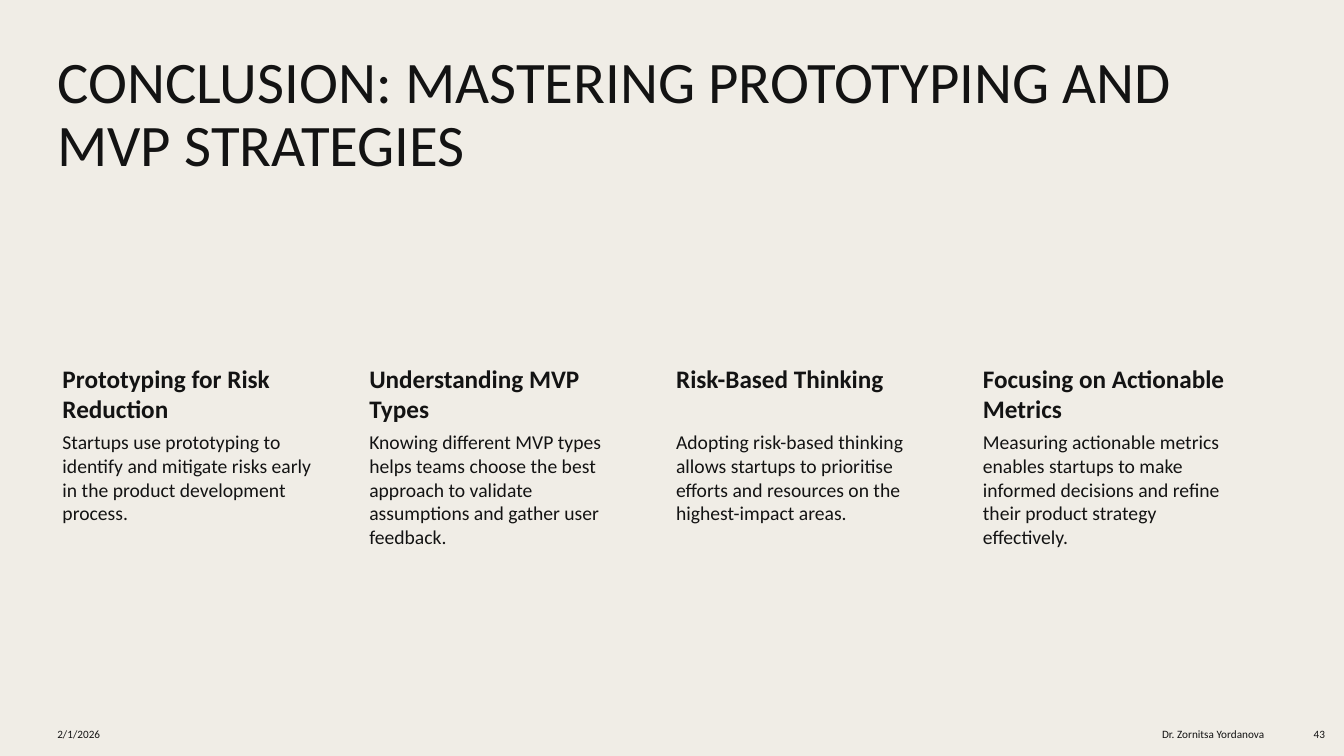
import pptx
import pptx.util
import pptx.dml.color
import pptx.enum.text
from pptx.util import Inches, Pt

TITLE = "CONCLUSION: MASTERING PROTOTYPING AND MVP STRATEGIES"
TAKEAWAYS = [
    ("Prototyping for Risk Reduction",
     "Startups use prototyping to identify and mitigate risks early in the product development process."),
    ("Understanding MVP Types",
     "Knowing different MVP types helps teams choose the best approach to validate assumptions and gather user feedback."),
    ("Risk-Based Thinking",
     "Adopting risk-based thinking allows startups to prioritise efforts and resources on the highest-impact areas."),
    ("Focusing on Actionable Metrics",
     "Measuring actionable metrics enables startups to make informed decisions and refine their product strategy effectively."),
]
ALIGN = pptx.enum.text.PP_ALIGN
FOOTER = [
    ("2/1/2026", 0.47, 3.11, ALIGN.LEFT),
    ("Dr. Zornitsa Yordanova", 9.73, 2.91, ALIGN.RIGHT),
    ("43", 12.74, 0.5, ALIGN.RIGHT),
]
FONT, INK, PAPER = "Calibri", "131313", "F0EDE6"
LEFT, COLUMN_WIDTH, COLUMN_STEP = 0.47, 2.77, 3.043
HEADING_TOP, HEADING_HEIGHT, BODY_HEIGHT = 3.57, 0.68, 2.4


def color(value):
    return pptx.dml.color.RGBColor.from_string(value)


def add_text(slide, text, box, size, bold=False, insets=(0.1, 0.05, 0.1, 0.05),
             align=ALIGN.LEFT, middle=False, spacing=1.0):
    sp = slide.shapes.add_textbox(*map(Inches, box))
    tf = sp.text_frame
    tf.word_wrap = True
    tf.margin_left, tf.margin_top, tf.margin_right, tf.margin_bottom = map(Inches, insets)
    anchor = pptx.enum.text.MSO_ANCHOR
    tf.vertical_anchor = anchor.MIDDLE if middle else anchor.TOP
    tf.text = text
    p = tf.paragraphs[0]
    p.alignment = align
    p.line_spacing = spacing
    font = p.runs[0].font
    font.name, font.size, font.bold = FONT, Pt(size), bold
    font.color.rgb = color(INK)


def main():
    prs = pptx.Presentation()
    prs.slide_width, prs.slide_height = Inches(13.33), Inches(7.5)
    slide = prs.slides.add_slide(prs.slide_layouts[6])
    fill = slide.background.fill
    fill.solid()
    fill.fore_color.rgb = color(PAPER)

    add_text(slide, TITLE, (LEFT, 0.47, 11.91, 1.78), 42, spacing=0.9)
    for i, (heading, body) in enumerate(TAKEAWAYS):
        x = LEFT + i * COLUMN_STEP
        add_text(slide, heading, (x, HEADING_TOP, COLUMN_WIDTH, HEADING_HEIGHT),
                 18, bold=True, insets=(0.15, 0.03, 0.03, 0.03))
        add_text(slide, body, (x, HEADING_TOP + HEADING_HEIGHT, COLUMN_WIDTH, BODY_HEIGHT),
                 14, insets=(0.15, 0.02, 0.02, 0.02))
    for text, x, width, align in FOOTER:
        add_text(slide, text, (x, 7.1, width, 0.37), 8, align=align, middle=True)

    prs.save("out.pptx")


if __name__ == "__main__":
    main()
